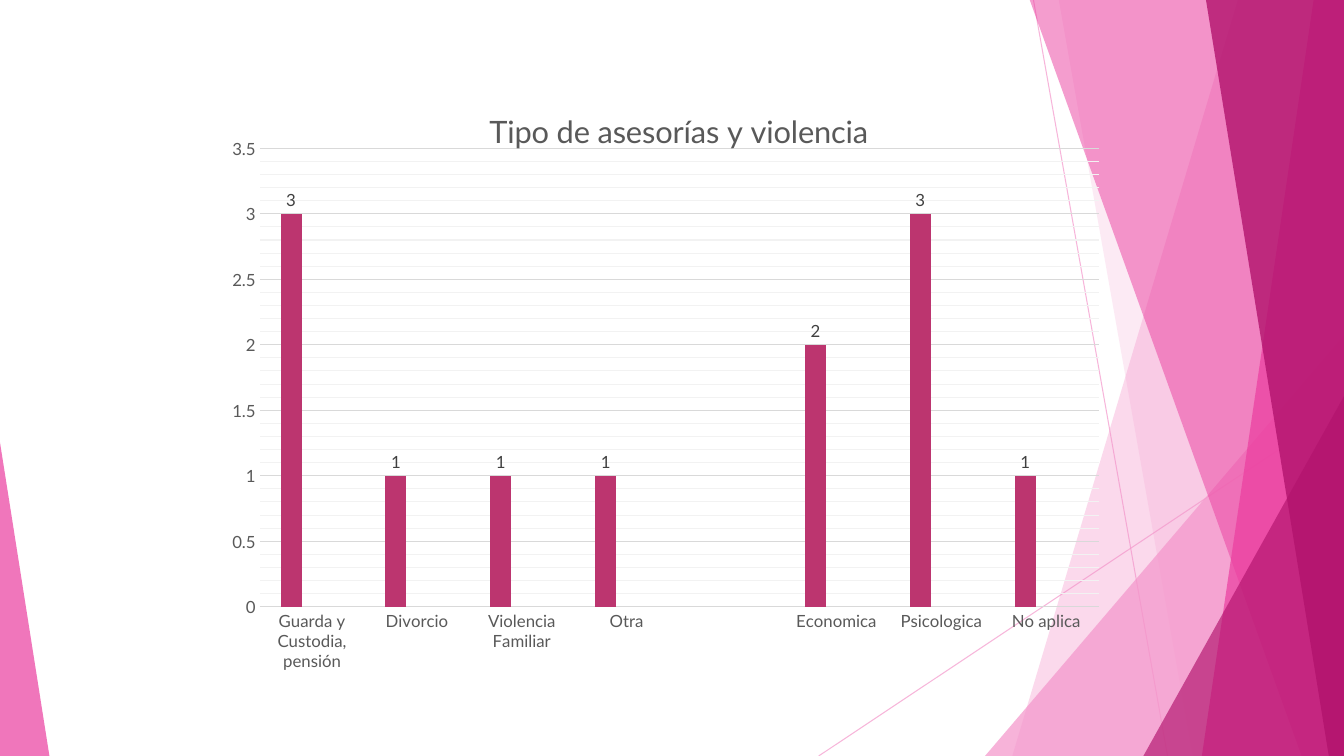
"""Build a slide with a column chart of advice and violence types beside pink facets."""
from copy import deepcopy
from dataclasses import dataclass

from lxml import etree
from pptx import Presentation
from pptx.chart.data import CategoryChartData
from pptx.dml.color import RGBColor
from pptx.enum.chart import XL_CHART_TYPE, XL_LABEL_POSITION, XL_TICK_MARK
from pptx.enum.shapes import MSO_CONNECTOR, MSO_SHAPE
from pptx.oxml import parse_xml
from pptx.oxml.ns import qn
from pptx.util import Inches, Pt


@dataclass(frozen=True)
class Theme:
    font: str = "Lato"
    light: str = "F496CB"
    pink: str = "EB3D9F"
    dark: str = "B2136D"
    text: str = "595959"
    label: str = "404040"
    grid: str = "D9D9D9"
    minor_grid: str = "F2F2F2"
    series: tuple = ("BC356F", "F27E19", "BC80E0")
    title_size: int = 22
    text_size: int = 12


theme = Theme()


def paint(fill, color, opacity):
    fill.solid()
    fill.fore_color.rgb = RGBColor.from_string(color)
    color_node = fill._xPr.find(".//" + qn("a:srgbClr"))
    etree.SubElement(color_node, qn("a:alpha")).set("val", str(opacity * 1000))


def style_font(font, size, color):
    font.name = theme.font
    font.size = Pt(size)
    font.bold = False
    font.color.rgb = RGBColor.from_string(color)


deck = Presentation()
deck.slide_width, deck.slide_height = Inches(13.33), Inches(7.5)
page = deck.slides.add_slide(deck.slide_layouts[6])
right, bottom = 13.33, 7.5

for start_x, start_y, end_x in [(10.25, 0, 11.58), (right, 4.03, 8.12)]:
    ray = page.shapes.add_connector(
        MSO_CONNECTOR.STRAIGHT, Inches(start_x), Inches(start_y), Inches(end_x), Inches(bottom)
    )
    ray.line.width = Pt(0.75)
    paint(ray.line.fill, theme.light, 70)
    etree.SubElement(ray._element.spPr, qn("a:effectLst"))

facets = [
    ("band", 12.28, 10.04, theme.light, 36),
    ("band", 10.5, 11.83, theme.light, 20),
    ("triangle", 9.77, 3.33, theme.light, 72),
    ("band", 10.21, 12.91, theme.pink, 50),
    ("band", 13.03, 11.92, theme.pink, 70),
    ("band", 11.96, 13.18, theme.dark, 80),
    ("triangle", 11.34, 3.93, theme.dark, 66),
    ("corner", 0, 4.39, theme.pink, 70),
]
for kind, first, second, color, opacity in facets:
    if kind == "band":
        outline = page.shapes.build_freeform(Inches(first), Inches(-0.01))
        corners = [(right, -0.01), (right, bottom), (second, bottom)]
        outline.add_line_segments([(Inches(x), Inches(y)) for x, y in corners], close=True)
        facet = outline.convert_to_shape()
    else:
        width = 0.49 if kind == "corner" else right - first
        facet = page.shapes.add_shape(
            MSO_SHAPE.ISOSCELES_TRIANGLE,
            Inches(first), Inches(second), Inches(width), Inches(bottom - second),
        )
        facet.adjustments[0] = 0 if kind == "corner" else 1
    facet.shadow.inherit = False
    facet.line.fill.background()
    paint(facet.fill, color, opacity)

data = CategoryChartData()
data.categories = [
    "Guarda y Custodia, pensión", "Divorcio", "Violencia Familiar", "Otra",
    "", "Economica", "Psicologica", "No aplica",
]
data.add_series("Series 1", (3, 1, 1, 1, None, 2, 3, 1))
for name in ("Series 2", "Series 3"):
    data.add_series(name, (None,) * 8)

chart = page.shapes.add_chart(
    XL_CHART_TYPE.COLUMN_CLUSTERED, Inches(2.22), Inches(0.79), Inches(8.89), Inches(5.93), data
).chart
style_font(chart.font, theme.text_size, theme.text)
chart.has_legend = False
chart.has_title = True
title = chart.chart_title.text_frame.paragraphs[0]
title.text = "Tipo de asesorías y violencia"
style_font(title.font, theme.title_size, theme.text)

category_axis, value_axis = chart.category_axis, chart.value_axis
for axis in (category_axis, value_axis):
    axis.major_tick_mark = axis.minor_tick_mark = XL_TICK_MARK.NONE
    style_font(axis.tick_labels.font, theme.text_size, theme.text)
value_axis.minimum_scale, value_axis.maximum_scale = 0, 3.5
value_axis.major_unit, value_axis.minor_unit = 0.5, 0.1
value_axis.has_major_gridlines = value_axis.has_minor_gridlines = True
value_axis.format.line.fill.background()
for line in (category_axis.format.line, value_axis.major_gridlines.format.line):
    line.width = Pt(0.75)
    line.color.rgb = RGBColor.from_string(theme.grid)

axis_node = value_axis._element
minor_style = deepcopy(axis_node.find(qn("c:majorGridlines")).find(qn("c:spPr")))
minor_style.find(".//" + qn("a:srgbClr")).set("val", theme.minor_grid)
axis_node.find(qn("c:minorGridlines")).append(minor_style)

plot = chart.plots[0]
plot.gap_width = 199
plot.overlap = 0
plot.vary_by_categories = False
for series, color in zip(plot.series, theme.series):
    series.format.fill.solid()
    series.format.fill.fore_color.rgb = RGBColor.from_string(color)
    labels = series.data_labels
    labels.show_value = True
    labels.position = XL_LABEL_POSITION.OUTSIDE_END
    style_font(labels.font, theme.text_size, theme.label)

title_place = {"xMode": "edge", "yMode": "edge", "x": 0.29, "y": 0.04}
plot_place = {
    "layoutTarget": "inner", "xMode": "edge", "yMode": "edge",
    "x": 0.04, "y": 0.115, "w": 0.936, "h": 0.767,
}
namespace = "http://schemas.openxmlformats.org/drawingml/2006/chart"
chart_node = chart._chartSpace.find(qn("c:chart"))
for parent, place in [
    (chart_node.find(qn("c:title")), title_place),
    (chart_node.find(qn("c:plotArea")), plot_place),
]:
    for old_layout in parent.findall(qn("c:layout")):
        parent.remove(old_layout)
    settings = "".join(f'<c:{key} val="{value}"/>' for key, value in place.items())
    layout = parse_xml(
        f'<c:layout xmlns:c="{namespace}"><c:manualLayout>{settings}</c:manualLayout></c:layout>'
    )
    parent.insert(0 if parent.find(qn("c:tx")) is None else 1, layout)

deck.save("out.pptx")
